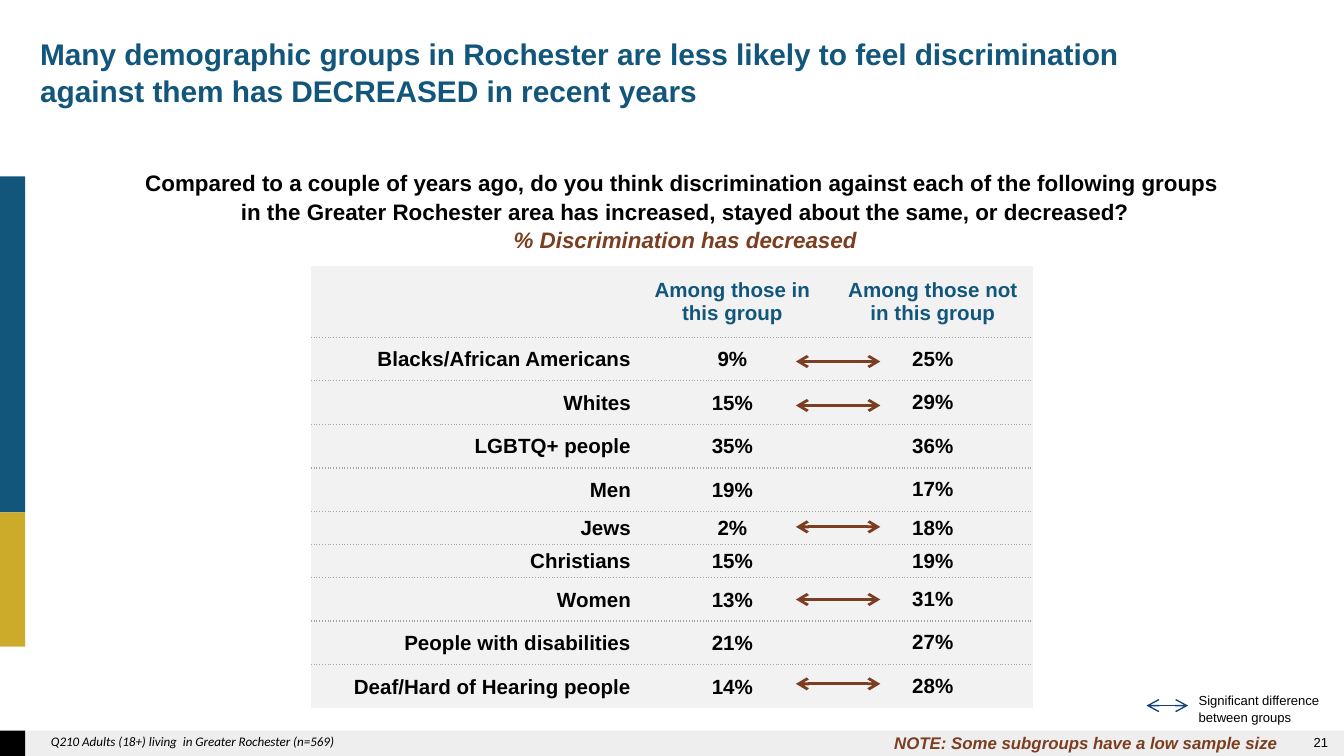
from dataclasses import dataclass
from itertools import accumulate

from lxml.etree import SubElement
from pptx import Presentation
from pptx.dml.color import RGBColor
from pptx.enum.shapes import MSO_CONNECTOR, MSO_SHAPE
from pptx.enum.text import MSO_ANCHOR, PP_ALIGN
from pptx.oxml import parse_xml
from pptx.oxml.ns import nsdecls, qn
from pptx.util import Pt


@dataclass(frozen=True)
class Theme:
    """Colours and type sizes of the slide."""
    blue: str = "12567C"
    gold: str = "CCAB2B"
    black: str = "000000"
    brown: str = "7C3E20"
    navy: str = "12427C"
    band: str = "595959"
    cell: str = "F2F2F2"
    rule: str = "A6A6A6"
    title: float = 16
    question: float = 12
    table: float = 11
    note: float = 9
    small: float = 7


THEME = Theme()
WIDTH, HEIGHT = 720, 405
NO_GRID_STYLE = "{2D5ABB26-0587-4C30-8999-92F81FD0307C}"
HEADINGS = ("", "Among those in this group", "Among those not in this group")
GROUPS = (
    ("Blacks/African Americans", "9%", "25%"),
    ("Whites", "15%", "29%"),
    ("LGBTQ+ people", "35%", "36%"),
    ("Men", "19%", "17%"),
    ("Jews", "2%", "18%"),
    ("Christians", "15%", "19%"),
    ("Women", "13%", "31%"),
    ("People with disabilities", "21%", "27%"),
    ("Deaf/Hard of Hearing people", "14%", "28%"),
)
COLUMN_WIDTHS = (172.2, 107.4, 107.4)
HEADER_HEIGHT, TALL, SHORT = 38.2, 23.35, 17.7
SHORT_GROUPS = ("Jews", "Christians")
ARROW_NUDGES = {"Blacks/African Americans": 1.3, "Whites": 1.5, "Jews": -0.7,
                "Women": 0, "Deaf/Hard of Hearing people": -1.5}


def style_paragraph(paragraph, text, align=PP_ALIGN.LEFT, spacing=None, color=THEME.black, **font):
    """Write text into a paragraph and apply its font values."""
    paragraph.alignment = align
    if spacing:
        paragraph.line_spacing = spacing
    run = paragraph.add_run()
    run.text = text
    for name, value in ({"name": "Arial"} | font).items():
        setattr(run.font, name, value)
    run.font.color.rgb = RGBColor.from_string(color)


def add_text(slide, box, lines, anchor=MSO_ANCHOR.TOP, **common):
    """Add a wrapped text box whose lines are (text, format) pairs."""
    frame = slide.shapes.add_textbox(*map(Pt, box)).text_frame
    frame.word_wrap = True
    frame.vertical_anchor = anchor
    for index, (text, own) in enumerate(lines):
        paragraph = frame.add_paragraph() if index else frame.paragraphs[0]
        style_paragraph(paragraph, text, **(common | own))


def add_block(slide, box, color, opacity=None):
    """Add a plain filled rectangle."""
    block = slide.shapes.add_shape(MSO_SHAPE.RECTANGLE, *map(Pt, box))
    block.shadow.inherit = False
    block.fill.solid()
    block.fill.fore_color.rgb = RGBColor.from_string(color)
    block.line.fill.background()
    if opacity:
        tint = block.element.spPr.find(".//" + qn("a:srgbClr"))
        SubElement(tint, qn("a:alpha"), val=str(opacity * 1000))


def add_double_arrow(slide, left, y, width, color, weight):
    """Add a level line with an arrowhead at each end."""
    arrow = slide.shapes.add_connector(
        MSO_CONNECTOR.STRAIGHT, Pt(left), Pt(y), Pt(left + width), Pt(y))
    arrow.line.color.rgb = RGBColor.from_string(color)
    arrow.line.width = Pt(weight)
    properties = arrow.element.spPr
    for end in ("a:headEnd", "a:tailEnd"):
        SubElement(properties.find(qn("a:ln")), qn(end), type="arrow")
    SubElement(properties, qn("a:effectLst"))


def add_frame(slide, box):
    """Add the footer band and the coloured side bars."""
    left, top, width, height = box
    bar, footer = 13.5, 13.5
    footer_top = top + height - footer
    add_block(slide, (left, footer_top, width, footer), THEME.band, 10)
    add_block(slide, (left, top + 94.5, bar, 180), THEME.blue)
    add_block(slide, (left, top + 274.5, bar, 72), THEME.gold)
    add_block(slide, (left, footer_top, bar, footer), THEME.black)


def add_heading(slide, box):
    """Add the title and the survey question."""
    left, top, width, height = box
    add_text(slide, (left, top, 606, 42.5), [(
        "Many demographic groups in Rochester are less likely to feel discrimination "
        "against them has DECREASED in recent years", {})],
        size=Pt(THEME.title), bold=True, color=THEME.blue, spacing=1.05)
    add_text(slide, (left, top + height - 51, width, 51), [
        ("Compared to a couple of years ago, do you think discrimination against "
         "each of the following groups ", {}),
        ("in the Greater Rochester area has increased, stayed about the same, or decreased?", {}),
        ("% Discrimination has decreased", {"color": THEME.brown, "italic": True})],
        size=Pt(THEME.question), bold=True, align=PP_ALIGN.CENTER, spacing=1.06)


def style_cell(cell, text, edges, compact, **font):
    """Fill one table cell and draw its dotted edges."""
    cell.vertical_anchor = MSO_ANCHOR.MIDDLE
    if compact:
        margins = {"margin_left": 0.7, "margin_right": 0.7, "margin_top": 0.7, "margin_bottom": 0}
        for name, value in margins.items():
            setattr(cell, name, Pt(value))
    for edge in edges:
        cell._tc.get_or_add_tcPr().append(parse_xml(
            f'<a:{edge} {nsdecls("a")} w="9525"><a:solidFill><a:srgbClr val="{THEME.rule}"/>'
            f'</a:solidFill><a:prstDash val="sysDot"/></a:{edge}>'))
    cell.fill.solid()
    cell.fill.fore_color.rgb = RGBColor.from_string(THEME.cell)
    if text:
        style_paragraph(cell.text_frame.paragraphs[0], text,
                        size=Pt(THEME.table), bold=True, **font)


def add_group_table(slide, box):
    """Add the comparison table and the arrows marking significant differences."""
    left, top, width, height = box
    rows = (HEADINGS, *GROUPS)
    heights = [HEADER_HEIGHT] + [SHORT if row[0] in SHORT_GROUPS else TALL for row in GROUPS]
    graphic = slide.shapes.add_table(len(rows), len(HEADINGS), *map(Pt, box))
    table = graphic.table
    table.first_row = table.horz_banding = False
    table._tbl.tblPr.find(qn("a:tableStyleId")).text = NO_GRID_STYLE
    for column, column_width in zip(table.columns, COLUMN_WIDTHS):
        column.width = Pt(column_width)
    for r, (row, row_height, bottom) in enumerate(zip(rows, heights, accumulate(heights))):
        table.rows[r].height = Pt(row_height)
        edges = ["lnT"] * (r > 0) + ["lnB"] * (r < len(rows) - 1)
        for c, text in enumerate(row):
            style_cell(table.cell(r, c), text, edges,
                       compact=r > 0 and (c < 2 or row_height == SHORT),
                       align=PP_ALIGN.RIGHT if c == 0 else PP_ALIGN.CENTER,
                       color=THEME.black if r else THEME.blue)
        if row[0] in ARROW_NUDGES:
            middle = top + bottom - row_height / 2 + ARROW_NUDGES[row[0]]
            add_double_arrow(slide, left + 259.9, middle, 45.2, THEME.brown, 1.5)


def add_legend(slide, box):
    """Add the key to the arrows."""
    left, top, width, height = box
    add_double_arrow(slide, left, top + 10.8, 22.3, THEME.navy, 0.75)
    add_text(slide, (left + 20.9, top, width - 20.9, height),
             [("Significant difference between groups", {})],
             size=Pt(THEME.small), spacing=1.06)


def add_footer(slide, box):
    """Add the source, the sample note and the page number."""
    left, top, width, height = box
    add_text(slide, (left + 20.2, top - 2, 474, 16),
             [("Q210 Adults (18+) living  in Greater Rochester (n=569)", {})],
             size=Pt(THEME.small), name="Calibri", italic=True)
    add_text(slide, (left + 470.9, top - 2.7, 220.3, 18),
             [("NOTE: Some subgroups have a low sample size", {})],
             size=Pt(THEME.note), bold=True, italic=True,
             color=THEME.brown, align=PP_ALIGN.RIGHT)
    add_text(slide, (left + 550.8, top, 167.8, 12.2), [("21", {})],
             anchor=MSO_ANCHOR.MIDDLE, size=Pt(THEME.small), align=PP_ALIGN.RIGHT)


def main():
    """Build and save the slide."""
    deck = Presentation()
    deck.slide_width, deck.slide_height = Pt(WIDTH), Pt(HEIGHT)
    slide = deck.slides.add_slide(deck.slide_layouts[6])
    add_frame(slide, (0, 0, WIDTH, HEIGHT))
    add_heading(slide, (14.4, 14.4, 705.6, 123))
    add_group_table(slide, (166.5, 142.5, 387, 237))
    add_legend(slide, (614.2, 367.2, 105.1, 24.5))
    add_footer(slide, (0, 391.5, WIDTH, 13.5))
    deck.save("out.pptx")


if __name__ == "__main__":
    main()
